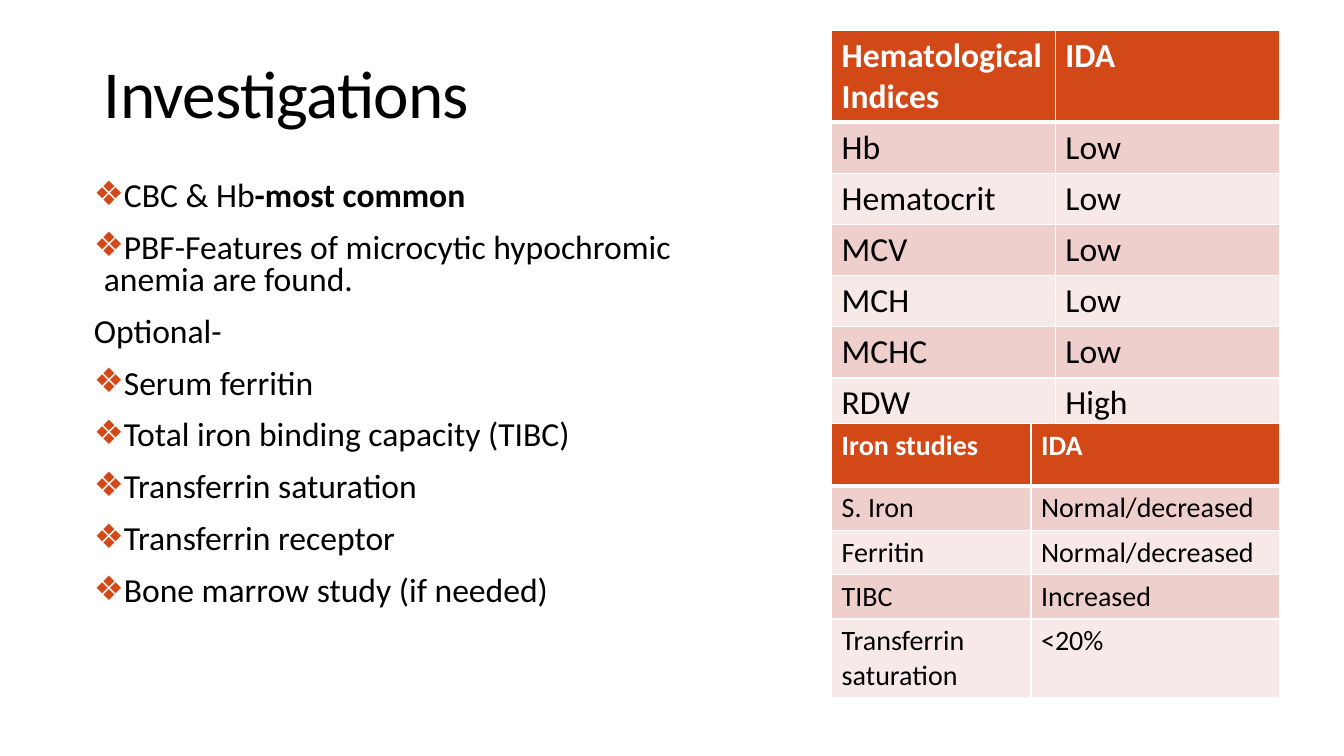
from lxml import etree
from pptx import Presentation
from pptx import util as u
from pptx.dml import color
from pptx.enum import text
from pptx.oxml import ns

ACCENT = "D34817"
BLACK = "000000"
WHITE = "FFFFFF"
BANDS = ("F7E9E8", "EFCFCC")


def rgb(value):
    return color.RGBColor.from_string(value)


def add_element(parent, tag, **attributes):
    return etree.SubElement(parent, ns.qn(tag), attributes)


class SlideBuilder:
    font = "Calibri"

    def __init__(self, presentation):
        self.width = presentation.slide_width
        self.height = presentation.slide_height
        self.slide = presentation.slides.add_slide(presentation.slide_layouts[1])

    def across(self, percent):
        return round(self.width * percent / 100)

    def down(self, percent):
        return round(self.height * percent / 100)

    def place(self, shape, left, top, width, height):
        shape.left, shape.top = self.across(left), self.down(top)
        shape.width, shape.height = self.across(width), self.down(height)

    def run(self, paragraph, words, size, fill=BLACK, bold=False):
        run = paragraph.add_run()
        run.text = words
        run.font.name = self.font
        run.font.size = u.Pt(size)
        run.font.bold = bold
        run.font.color.rgb = rgb(fill)
        return run

    def title(self, words, *area):
        shape = self.slide.shapes.title
        self.place(shape, *area)
        frame = shape.text_frame
        frame.auto_size = text.MSO_AUTO_SIZE.NONE
        frame.vertical_anchor = text.MSO_ANCHOR.BOTTOM
        paragraph = frame.paragraphs[0]
        paragraph.alignment = text.PP_ALIGN.LEFT
        paragraph.line_spacing = 0.85
        run = self.run(paragraph, words, 48)
        run.font._element.set("spc", "-50")

    def bullet(self, paragraph, shown):
        properties = paragraph._p.get_or_add_pPr()
        hang = u.Inches(0.1) if shown else 0
        properties.set("marL", str(hang))
        properties.set("indent", str(-hang))
        if shown:
            tint = add_element(properties, "a:buClr")
            add_element(tint, "a:srgbClr", val=ACCENT)
            add_element(properties, "a:buChar", char="❖")
        else:
            add_element(properties, "a:buNone")

    def body(self, items, *area):
        shape = self.slide.placeholders[1]
        self.place(shape, *area)
        frame = shape.text_frame
        frame.auto_size = text.MSO_AUTO_SIZE.NONE
        frame.vertical_anchor = text.MSO_ANCHOR.TOP
        frame.margin_left = frame.margin_right = 0
        for index, (bulleted, runs) in enumerate(items):
            paragraph = frame.add_paragraph() if index else frame.paragraphs[0]
            self.bullet(paragraph, bulleted)
            paragraph.line_spacing = 0.8
            paragraph.space_before = u.Pt(12 if index else 0)
            paragraph.space_after = u.Pt(2)
            for words, bold in runs:
                self.run(paragraph, words, 24, bold=bold)

    def borders(self, cell, row):
        properties = cell._tc.get_or_add_tcPr()
        heavy = {0: "a:lnB", 1: "a:lnT"}.get(row)
        for side in ("a:lnL", "a:lnR", "a:lnT", "a:lnB"):
            points = 3 if side == heavy else 1
            line = add_element(properties, side, w=str(u.Pt(points)))
            add_element(add_element(line, "a:solidFill"), "a:srgbClr", val=WHITE)

    def table(self, rows, left, top, columns, heights, size):
        frame = self.slide.shapes.add_table(
            len(rows), len(columns), self.across(left), self.down(top),
            self.across(sum(columns)), self.down(sum(heights)))
        table = frame.table
        for column, width in zip(table.columns, columns):
            column.width = self.across(width)
        for row, height in zip(table.rows, heights):
            row.height = self.down(height)
        for row_index, values in enumerate(rows):
            header = row_index == 0
            for column_index, words in enumerate(values):
                cell = table.cell(row_index, column_index)
                self.borders(cell, row_index)
                cell.fill.solid()
                cell.fill.fore_color.rgb = rgb(ACCENT if header else BANDS[row_index % 2])
                self.run(cell.text_frame.paragraphs[0], words, size,
                         WHITE if header else BLACK, header)


def main():
    presentation = Presentation()
    presentation.slide_width = u.Inches(13.33)
    presentation.slide_height = u.Inches(7.5)
    builder = SlideBuilder(presentation)

    builder.title("Investigations", 6.98, 4.93, 42.08, 13.2)
    tests = ["Serum ferritin", "Total iron binding capacity (TIBC)",
             "Transferrin saturation", "Transferrin receptor",
             "Bone marrow study (if needed)"]
    items = [
        (True, [("CBC & Hb", False), ("-most common", True)]),
        (True, [("PBF-Features of microcytic hypochromic anemia are found.", False)]),
        (False, [("Optional-", False)]),
    ] + [(True, [(test, False)]) for test in tests]
    builder.body(items, 6.98, 23.33, 49.13, 58.67)

    indices = [("Hematological Indices", "IDA"), ("Hb", "Low"), ("Hematocrit", "Low"),
               ("MCV", "Low"), ("MCH", "Low"), ("MCHC", "Low"), ("RDW", "High")]
    builder.table(indices, 61.88, 4, [16.65] * 2, [9.07] + [5.47] * 6, 24)

    iron_studies = [("Iron studies", "IDA"), ("S. Iron", "Normal/decreased"),
                    ("Ferritin", "Normal/decreased"), ("TIBC", "Increased"),
                    ("Transferrin saturation", "<20%")]
    builder.table(iron_studies, 61.88, 56, [14.83, 18.5],
                  [8.27] + [4.67] * 3 + [8.27], 20)

    presentation.save("out.pptx")


if __name__ == "__main__":
    main()
